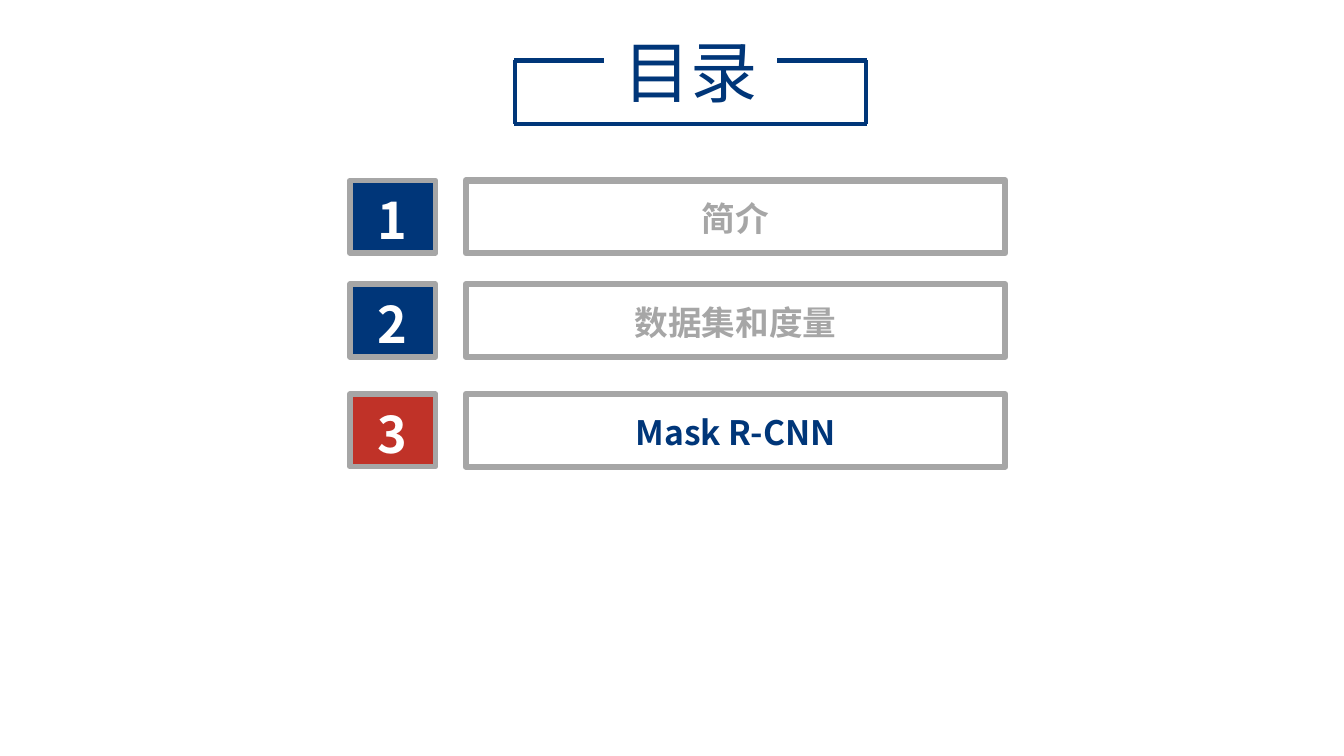
"""Build a table-of-contents slide with three numbered entries."""
from lxml.etree import SubElement
from pptx import Presentation
from pptx.dml.color import RGBColor
from pptx.enum.shapes import MSO_CONNECTOR, MSO_SHAPE
from pptx.enum.text import MSO_ANCHOR, PP_ALIGN
from pptx.oxml.ns import qn
from pptx.util import Inches, Pt

NAVY = RGBColor(0x00, 0x36, 0x79)
RED = RGBColor(0xC0, 0x32, 0x28)
GRAY = RGBColor(0xA6, 0xA6, 0xA6)
WHITE = RGBColor(0xFF, 0xFF, 0xFF)
FONT = "Noto Sans CJK SC"


def write_text(shape, text, size, color, bold=True, line_spacing=1.1):
    frame = shape.text_frame
    frame_format = {
        "word_wrap": True,
        "vertical_anchor": MSO_ANCHOR.MIDDLE,
        "margin_top": 0,
        "margin_bottom": 0,
    }
    for name, value in frame_format.items():
        setattr(frame, name, value)
    paragraph = frame.paragraphs[0]
    paragraph.alignment = PP_ALIGN.CENTER
    paragraph.line_spacing = line_spacing
    run = paragraph.add_run()
    run.text = text
    for name, value in {"name": FONT, "size": Pt(size), "bold": bold}.items():
        setattr(run.font, name, value)
    run.font.color.rgb = color
    for properties in shape.element.iter(qn("a:rPr")):
        SubElement(properties, qn("a:ea"), typeface=FONT)


def add_box(shapes, left, top, width, line_width, fill=None):
    box = shapes.add_shape(
        MSO_SHAPE.RECTANGLE, Inches(left), Inches(top), Inches(width), Inches(0.72)
    )
    box.shadow.inherit = False
    if fill is None:
        box.fill.background()
    else:
        box.fill.solid()
        box.fill.fore_color.rgb = fill
    box.line.color.rgb = GRAY
    box.line.width = Pt(line_width)
    return box


presentation = Presentation()
presentation.slide_width = Inches(13.33)
presentation.slide_height = Inches(7.5)
slide = presentation.slides.add_slide(presentation.slide_layouts[6])

heading = slide.shapes.add_group_shape()
title = heading.shapes.add_textbox(Inches(5.83), Inches(0.25), Inches(2.04), Inches(0.91))
write_text(title, "目录", 48, NAVY, bold=False, line_spacing=1.0)

frame_lines = [
    (7.71, 0.6, 8.6, 0.6),
    (5.1, 0.6, 5.99, 0.6),
    (5.1, 1.23, 8.6, 1.23),
    (5.11, 0.6, 5.11, 1.23),
    (8.59, 0.6, 8.59, 1.23),
]
for ends in frame_lines:
    line = heading.shapes.add_connector(MSO_CONNECTOR.STRAIGHT, *map(Inches, ends))
    line.line.color.rgb = NAVY
    line.line.width = Pt(3)
    SubElement(line.element.spPr, qn("a:effectLst"))

entries = [
    ("简介", 1.79, NAVY, GRAY),
    ("数据集和度量", 2.82, NAVY, GRAY),
    ("Mask R-CNN", 3.91, RED, NAVY),
]
for number, (label, top, number_fill, label_color) in enumerate(entries, start=1):
    number_box = add_box(slide.shapes, 3.47, top, 0.85, 4, number_fill)
    write_text(number_box, str(number), 36, WHITE)
    entry = slide.shapes.add_group_shape()
    add_box(entry.shapes, 4.62, top, 5.35, 4.5)
    caption = entry.shapes.add_textbox(
        Inches(4.62), Inches(top + 0.1), Inches(5.35), Inches(0.51)
    )
    write_text(caption, label, 24, label_color)

presentation.save("out.pptx")
